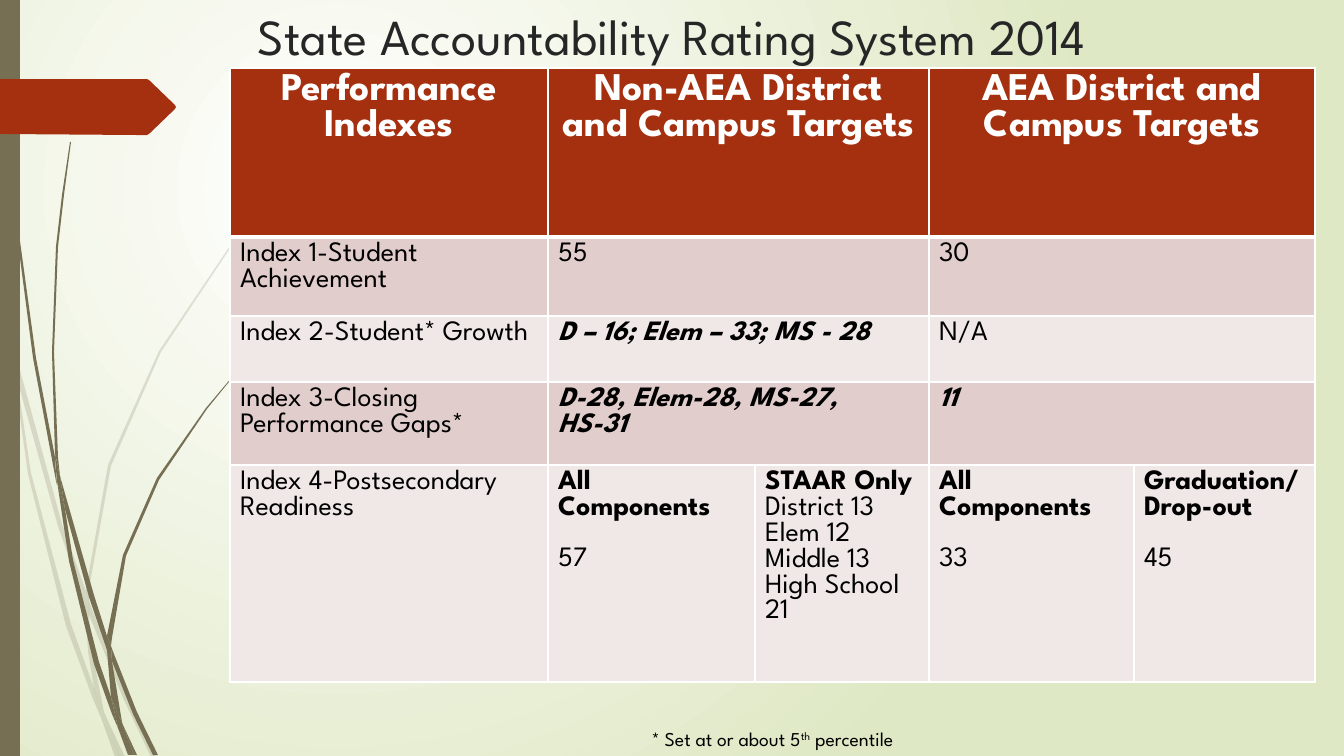
from lxml import etree
from pptx import Presentation
from pptx.dml.color import RGBColor
from pptx.enum.shapes import MSO_SHAPE
from pptx.enum.text import MSO_ANCHOR, PP_ALIGN
from pptx.oxml.ns import qn
from pptx.util import Emu, Pt

SCALE = 914400 / 100.8
FONT = "League Spartan"
COLORS = {
    "white": "FFFFFF", "black": "000000", "title": "262626", "sage": "DFE8C4",
    "olive": "766F54", "rust": "A53010", "band_dark": "E1CDCC", "band_light": "F0E8E7",
}


def px(value):
    return Emu(round(value * SCALE))


def style(runs, size, color, bold=False, italic=False):
    for run in runs:
        run.font.name = FONT
        run.font.size = Pt(size)
        run.font.bold = bold
        run.font.italic = italic
        run.font.color.rgb = RGBColor.from_string(COLORS[color])


presentation = Presentation()
presentation.slide_width = px(1344)
presentation.slide_height = px(756)
slide = presentation.slides.add_slide(presentation.slide_layouts[6])

background = slide.background.fill
background.gradient()
for stop, color in zip(background.gradient_stops, ["white", "sage"]):
    stop.color.rgb = RGBColor.from_string(COLORS[color])
linear = slide._element.find(".//" + qn("a:lin"))
radial = etree.Element(qn("a:path"), path="circle")
etree.SubElement(radial, qn("a:fillToRect"), l="50000", t="50000", r="100000", b="100000")
linear.getparent().replace(linear, radial)

faint_wisps = [
    [(11, 353), (9, 325), (0, 284), (0, 301), (10, 347)],
    [(58, 526), (85, 604), (86, 591), (62, 524), (14, 348), (17, 379)],
    [(93, 612), (89, 601), (89, 615), (124, 700), (151, 757), (156, 757), (128, 698)],
    [(120, 757), (125, 757), (106, 717)],
    [(94, 688), (71, 624), (31, 473), (17, 379), (11, 353), (28, 474), (66, 626),
     (93, 699), (102, 720), (100, 713)],
    [(85, 604), (88, 651), (94, 688), (97, 698), (106, 717), (104, 712), (92, 651),
     (89, 615), (89, 613)],
    [(89, 589), (111, 466), (161, 352), (231, 247), (270, 200), (292, 176), (314, 155),
     (314, 154), (291, 176), (270, 199), (230, 246), (159, 351), (108, 465), (86, 589),
     (86, 591), (89, 601)],
    [(102, 720), (115, 757), (120, 757)],
    [(89, 613), (89, 615), (89, 601), (86, 591), (85, 604)],
    [(97, 698), (94, 688), (100, 713), (102, 720), (120, 757), (106, 717)],
]
solid_wisps = [
    [(7, 111), (17, 235), (33, 358), (56, 481), (57, 485), (55, 461), (55, 457),
     (36, 358), (19, 234), (8, 110), (5, 48), (4, 0), (3, 0), (4, 48)],
    [(89, 597), (107, 650), (107, 638), (107, 636), (94, 595), (60, 476), (65, 509)],
    [(114, 654), (111, 646), (112, 661), (133, 714), (153, 755), (158, 755), (137, 712)],
    [(111, 697), (99, 662), (73, 560), (65, 509), (57, 481), (69, 561), (94, 664),
     (112, 714), (118, 728), (117, 723)],
    [(60, 476), (58, 457), (54, 352), (58, 247), (64, 195), (71, 142), (70, 142),
     (62, 195), (56, 247), (52, 352), (55, 453)],
    [(134, 755), (137, 755), (123, 725)],
    [(57, 481), (65, 509), (60, 476), (55, 453), (55, 457)],
    [(112, 638), (126, 556), (159, 480), (207, 409), (233, 377), (247, 362), (263, 347),
     (262, 347), (247, 361), (233, 376), (206, 408), (157, 478), (123, 555), (107, 636),
     (111, 646)],
    [(118, 728), (128, 755), (132, 755)],
    [(107, 650), (111, 697), (117, 712), (123, 725), (122, 722), (112, 661), (110, 656)],
    [(107, 650), (110, 656), (112, 661), (111, 646), (107, 636), (107, 638)],
    [(117, 712), (111, 697), (117, 723), (118, 728), (131, 755), (134, 755), (123, 725)],
]
bar = slide.shapes.add_shape(MSO_SHAPE.RECTANGLE, 0, 0, px(20), px(756))
bar.shadow.inherit = False
bar.line.fill.background()
bar.fill.solid()
bar.fill.fore_color.rgb = RGBColor.from_string(COLORS["olive"])

arrow = [(175, 109), (149, 134), (147, 135), (137, 135), (0, 134), (0, 79),
         (147, 79), (149, 80), (175, 105), (176, 107)]
for outlines, color, opacity in [
    (faint_wisps, "olive", 20), (solid_wisps, "olive", 100), ([arrow], "rust", 100),
]:
    for outline in outlines:
        points = [(px(x), px(y)) for x, y in outline]
        builder = slide.shapes.build_freeform(*points[0])
        builder.add_line_segments(points[1:], close=True)
        shape = builder.convert_to_shape()
        shape.shadow.inherit = False
        shape.line.fill.background()
        shape.fill.solid()
        shape.fill.fore_color.rgb = RGBColor.from_string(COLORS[color])
        if opacity < 100:
            color_element = shape._element.spPr.find(".//" + qn("a:srgbClr"))
            etree.SubElement(color_element, qn("a:alpha"), val=str(opacity * 1000))
        if color == "olive":
            bar._element.addprevious(shape._element)

title = slide.shapes.add_textbox(px(69), 0, px(1206), px(146))
title.text_frame.word_wrap = True
title.text_frame.vertical_anchor = MSO_ANCHOR.TOP
paragraph = title.text_frame.paragraphs[0]
paragraph.text = "State Accountability Rating System 2014"
paragraph.alignment = PP_ALIGN.CENTER
style(paragraph.runs, 36, "title")

column_widths = [318, 207, 174, 205, 181]
row_heights = [169, 79, 66, 83, 217]
row_fills = ["rust", "band_dark", "band_light", "band_dark", "band_light"]
table = slide.shapes.add_table(
    5, 5, px(230), px(68), px(sum(column_widths)), px(sum(row_heights))
).table
for column, width in zip(table.columns, column_widths):
    column.width = px(width)
for row_index, (row, height) in enumerate(zip(table.rows, row_heights)):
    row.height = px(height)
    for cell in row.cells:
        properties = cell._tc.get_or_add_tcPr()
        for side in "LRTB":
            thick = (row_index, side) in [(0, "B"), (1, "T")]
            border = etree.SubElement(
                properties, qn("a:ln" + side), w=str(Pt(3 if thick else 1)))
            border_fill = etree.SubElement(border, qn("a:solidFill"))
            etree.SubElement(border_fill, qn("a:srgbClr"), val=COLORS["white"])
        cell.fill.solid()
        cell.fill.fore_color.rgb = RGBColor.from_string(COLORS[row_fills[row_index]])
    if row_index < 4:
        for first in (1, 3):
            table.cell(row_index, first).merge(table.cell(row_index, first + 1))

rows = [
    ["Performance Indexes", "Non-AEA District and Campus Targets",
     "AEA District and Campus Targets"],
    ["Index 1-Student Achievement", "55", "30"],
    ["Index 2-Student* Growth", "D – 16; Elem – 33; MS - 28", "N/A"],
    ["Index 3-Closing Performance Gaps*", "D-28, Elem-28, MS-27,\nHS-31", "11"],
    ["Index 4-Postsecondary Readiness", "All Components\n57",
     "STAAR Only\nDistrict 13\nElem 12\nMiddle 13\nHigh School 21",
     "All Components\n33", "Graduation/Drop-out\n45"],
]
emphasized = [(2, 1), (3, 1), (3, 3)]
for row_index, texts in enumerate(rows):
    columns = range(5) if len(texts) == 5 else (0, 1, 3)
    for column_index, text in zip(columns, texts):
        text_frame = table.cell(row_index, column_index).text_frame
        text_frame.text = text
        italic = (row_index, column_index) in emphasized
        for line, paragraph in enumerate(text_frame.paragraphs):
            if row_index == 0:
                paragraph.alignment = PP_ALIGN.CENTER
                style(paragraph.runs, 28, "white", bold=True)
                continue
            heading = row_index == 4 and column_index > 0 and line == 0
            style(paragraph.runs, 20, "black", bold=italic or heading, italic=italic)
            if row_index == 4 and column_index != 2 and line == 1:
                paragraph.space_before = Pt(18)

footnote = slide.shapes.add_textbox(px(338), px(722), px(869), px(34))
footnote.text_frame.word_wrap = True
paragraph = footnote.text_frame.paragraphs[0]
paragraph.alignment = PP_ALIGN.CENTER
for text in ["* Set at or about 5", "th", " percentile"]:
    paragraph.add_run().text = text
style(paragraph.runs, 14, "black")
paragraph.runs[1].font._element.set("baseline", "30000")

presentation.save("out.pptx")
